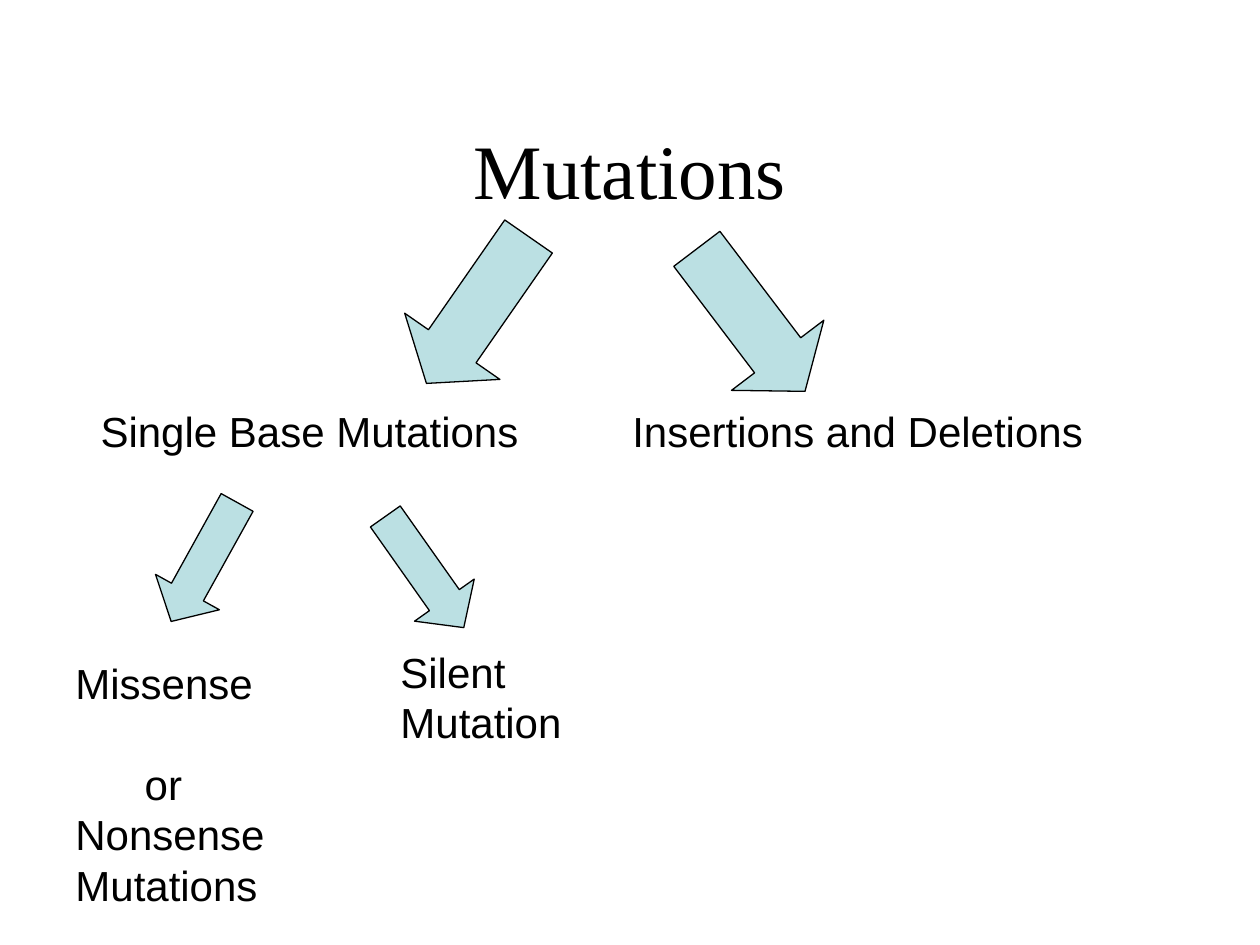
from pptx import Presentation
from pptx import util as u
from pptx.dml.color import RGBColor
from pptx.enum import shapes, text

COLOURS = {"ink": "000000", "arrow": "BBE0E3"}


def colour(name):
    return RGBColor.from_string(COLOURS[name])


def add_text(page, box, paragraphs, font="Arial", size=24,
             align=text.PP_ALIGN.LEFT, anchor=text.MSO_ANCHOR.TOP):
    frame = page.shapes.add_textbox(*map(u.Inches, box)).text_frame
    frame.word_wrap = True
    frame.vertical_anchor = anchor
    for index, (lines, indent, gap) in enumerate(paragraphs):
        para = frame.add_paragraph() if index else frame.paragraphs[0]
        para.alignment = align
        para.line_spacing = u.Pt(size * 1.2)
        para.space_before = u.Pt(gap)
        para._p.get_or_add_pPr().set("indent", str(u.Inches(indent)))
        for number, line in enumerate(lines):
            if number:
                para.add_line_break()
            span = para.add_run()
            span.text = line
            span.font.name = font
            span.font.size = u.Pt(size)
            span.font.color.rgb = colour("ink")


def add_arrow(page, box, rotation, head):
    arrow = page.shapes.add_shape(shapes.MSO_SHAPE.DOWN_ARROW, *map(u.Inches, box))
    arrow.rotation = rotation
    arrow.adjustments[0] = 0.5
    arrow.adjustments[1] = head
    arrow.shadow.inherit = False
    arrow.fill.solid()
    arrow.fill.fore_color.rgb = colour("arrow")
    arrow.line.color.rgb = colour("ink")
    arrow.line.width = u.Pt(0.75)


def add_heading(page, box):
    add_text(page, box, [(["Mutations"], 0, 0)], "Times New Roman", 44,
             text.PP_ALIGN.CENTER, text.MSO_ANCHOR.MIDDLE)


def add_main_types(page, box):
    left, top, width, height = box
    add_arrow(page, (left + 5.08, top, 0.92, 1.42), 322.8, 0.39)
    add_arrow(page, (left + 2.91, top - 0.08, 0.92, 1.42), 34.8, 0.39)
    label = "Single Base Mutations\t\tInsertions and Deletions"
    add_text(page, (left, top + 1.34, width, height - 1.34), [([label], 0.28, 0)])


def add_single_base_types(page, box):
    left, top, width, height = box
    add_arrow(page, (left + 0.83, top, 0.58, 1.08), 29, 0.46)
    add_arrow(page, (left + 2.58, top + 0.08, 0.58, 1.08), 324.8, 0.46)
    add_text(page, (left, top + 1.25, 1.75, height - 1.25),
             [(["Missense"], 0, 0), (["or Nonsense", "Mutations"], 0.55, 28.8)])
    add_text(page, (left + 2.58, top + 1.16, width - 2.58, 0.9),
             [(["Silent"], 0, 0), (["Mutation"], 0, 0)],
             anchor=text.MSO_ANCHOR.MIDDLE)


def main():
    deck = Presentation()
    deck.slide_width, deck.slide_height = u.Inches(10), u.Inches(7.5)
    page = deck.slides.add_slide(deck.slide_layouts[6])
    add_heading(page, (0.75, 0.92, 8.5, 0.83))
    add_main_types(page, (0.42, 1.83, 9.33, 1.84))
    add_single_base_types(page, (0.5, 3.92, 4.25, 3.35))
    deck.save("out.pptx")


if __name__ == "__main__":
    main()
